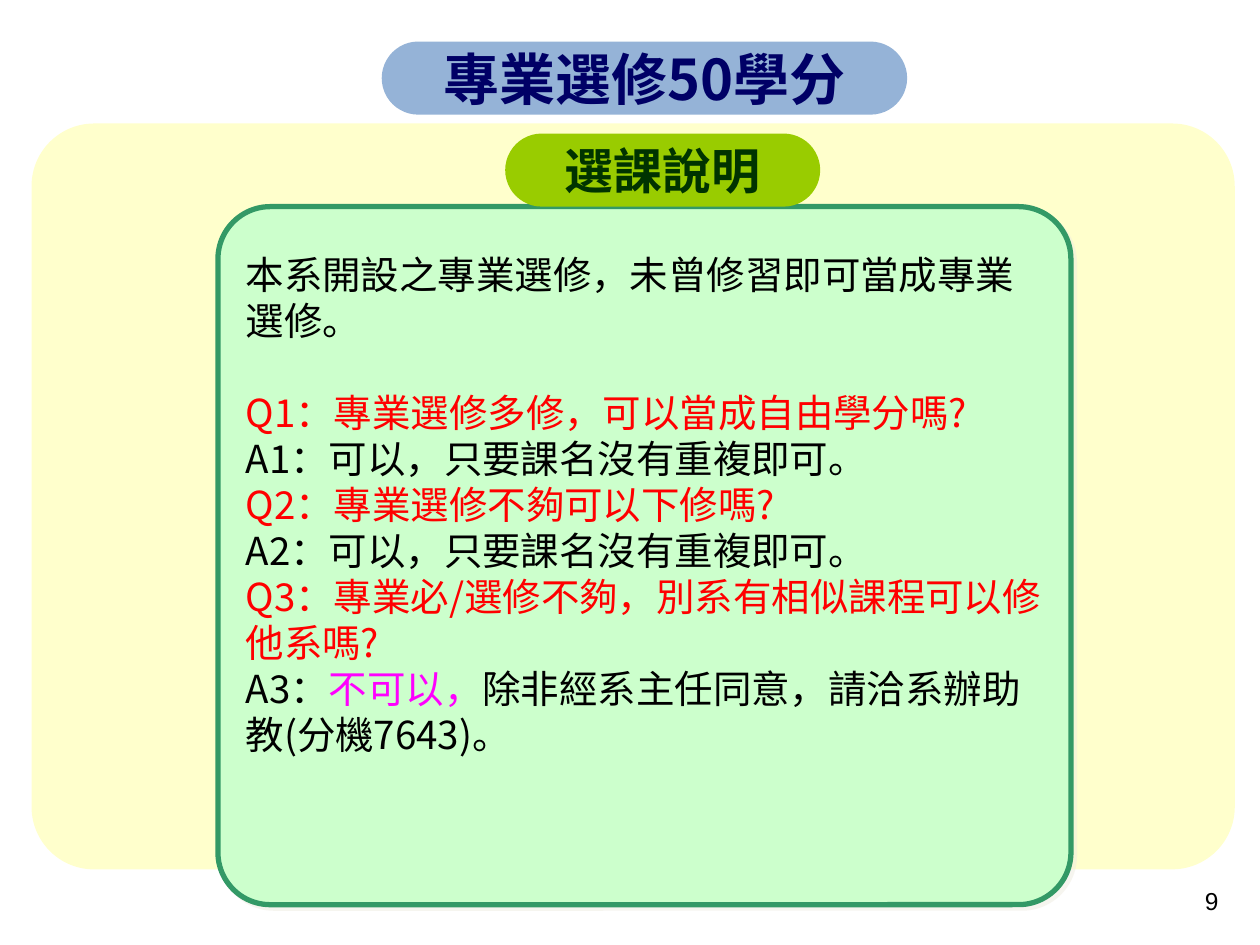
from lxml.etree import SubElement
from pptx import Presentation
from pptx.dml.color import RGBColor
from pptx.enum.shapes import MSO_SHAPE
from pptx.enum.text import MSO_ANCHOR, PP_ALIGN
from pptx.oxml.ns import qn
from pptx.util import Inches, Pt

COLORS = {
    "cream": "FFFFCC",
    "mint": "CCFFCC",
    "border": "339966",
    "lime": "99CC00",
    "blue": "95B3D7",
    "shadow": "EEECE1",
    "black": "000000",
    "red": "FF0000",
    "magenta": "FF00FF",
    "forest": "003300",
    "navy": "000066",
}
BODY_FONT = "Noto Sans CJK JP"
HEADING_FONT = "Noto Sans CJK SC"
LINE_HEIGHT = Pt(26.3)

EXPLANATION = [
    [("本系開設之專業選修，未曾修習即可當成專業選修。", "black")],
    [("Q1：專業選修多修，可以當成自由學分嗎?", "red")],
    [("A1：可以，只要課名沒有重複即可。", "black")],
    [("Q2：專業選修不夠可以下修嗎?", "red")],
    [("A2：可以，只要課名沒有重複即可。", "black")],
    [("Q3：專業必/選修不夠，別系有相似課程可以修他系嗎?", "red")],
    [
        ("A3：", "black"),
        ("不可以，", "magenta"),
        ("除非經系主任同意，請洽系辦助教(分機7643)。", "black"),
    ],
]


def rgb(name):
    return RGBColor.from_string(COLORS[name])


def add_text(paragraph, text, *, size, font, color="black", bold=False,
             align=PP_ALIGN.LEFT):
    paragraph.alignment = align
    run = paragraph.add_run()
    run.text = text
    run.font.size = Pt(size)
    run.font.bold = bold
    run.font.color.rgb = rgb(color)
    run.font.name = font
    SubElement(run.font._element, qn("a:ea"), typeface=font)


def add_panel(slide, left, top, width, height, fill, radius, line=None):
    panel = slide.shapes.add_shape(
        MSO_SHAPE.ROUNDED_RECTANGLE,
        Inches(left), Inches(top), Inches(width), Inches(height))
    panel.adjustments[0] = radius
    panel.shadow.inherit = False
    panel.fill.solid()
    panel.fill.fore_color.rgb = rgb(fill)
    if line:
        panel.line.color.rgb = rgb(line)
        panel.line.width = Pt(3)
    else:
        panel.line.fill.background()
    return panel


def add_shadow(shape):
    effects = shape._element.spPr.find(qn("a:effectLst"))
    shadow = SubElement(effects, qn("a:outerShdw"), dist=str(Pt(2.8)),
                        dir="2700000", algn="ctr", rotWithShape="0")
    color = SubElement(shadow, qn("a:srgbClr"), val=COLORS["shadow"])
    SubElement(color, qn("a:alpha"), val="50000")


def add_heading(slide, text, left, top, width, *, fill, size, color):
    heading = add_panel(slide, left, top, width, 0.58, fill, 0.5)
    frame = heading.text_frame
    frame.word_wrap = False
    frame.vertical_anchor = MSO_ANCHOR.MIDDLE
    add_text(frame.paragraphs[0], text, size=size, font=HEADING_FONT,
             color=color, bold=True, align=PP_ALIGN.CENTER)


def add_explanation(slide):
    panel = add_panel(slide, 1.73, 1.64, 6.77, 5.54, "mint", 0.075, "border")
    add_shadow(panel)
    frame = panel.text_frame
    frame.word_wrap = True
    frame.vertical_anchor = MSO_ANCHOR.TOP
    frame.margin_top = Inches(0.23)
    for index, runs in enumerate(EXPLANATION):
        paragraph = frame.add_paragraph() if index else frame.paragraphs[0]
        paragraph.line_spacing = LINE_HEIGHT
        if index == 1:
            paragraph.space_before = LINE_HEIGHT
        for text, color in runs:
            add_text(paragraph, text, size=22, font=BODY_FONT, color=color)


def add_page_number(slide, number):
    box = slide.shapes.add_textbox(
        Inches(7.44), Inches(6.98), Inches(2.33), Inches(0.52))
    box.text_frame.word_wrap = True
    add_text(box.text_frame.paragraphs[0], number, size=14, font="Arial",
             align=PP_ALIGN.RIGHT)


def main():
    presentation = Presentation()
    presentation.slide_width = Inches(10)
    presentation.slide_height = Inches(7.5)
    slide = presentation.slides.add_slide(presentation.slide_layouts[6])
    add_panel(slide, 0.25, 0.98, 9.55, 5.92, "cream", 0.084)
    add_page_number(slide, "9")
    add_explanation(slide)
    add_heading(slide, "選課說明", 4.01, 1.06, 2.5,
                fill="lime", size=28, color="forest")
    add_heading(slide, "專業選修50學分", 3.03, 0.33, 4.17,
                fill="blue", size=32, color="navy")
    presentation.save("out.pptx")


if __name__ == "__main__":
    main()
